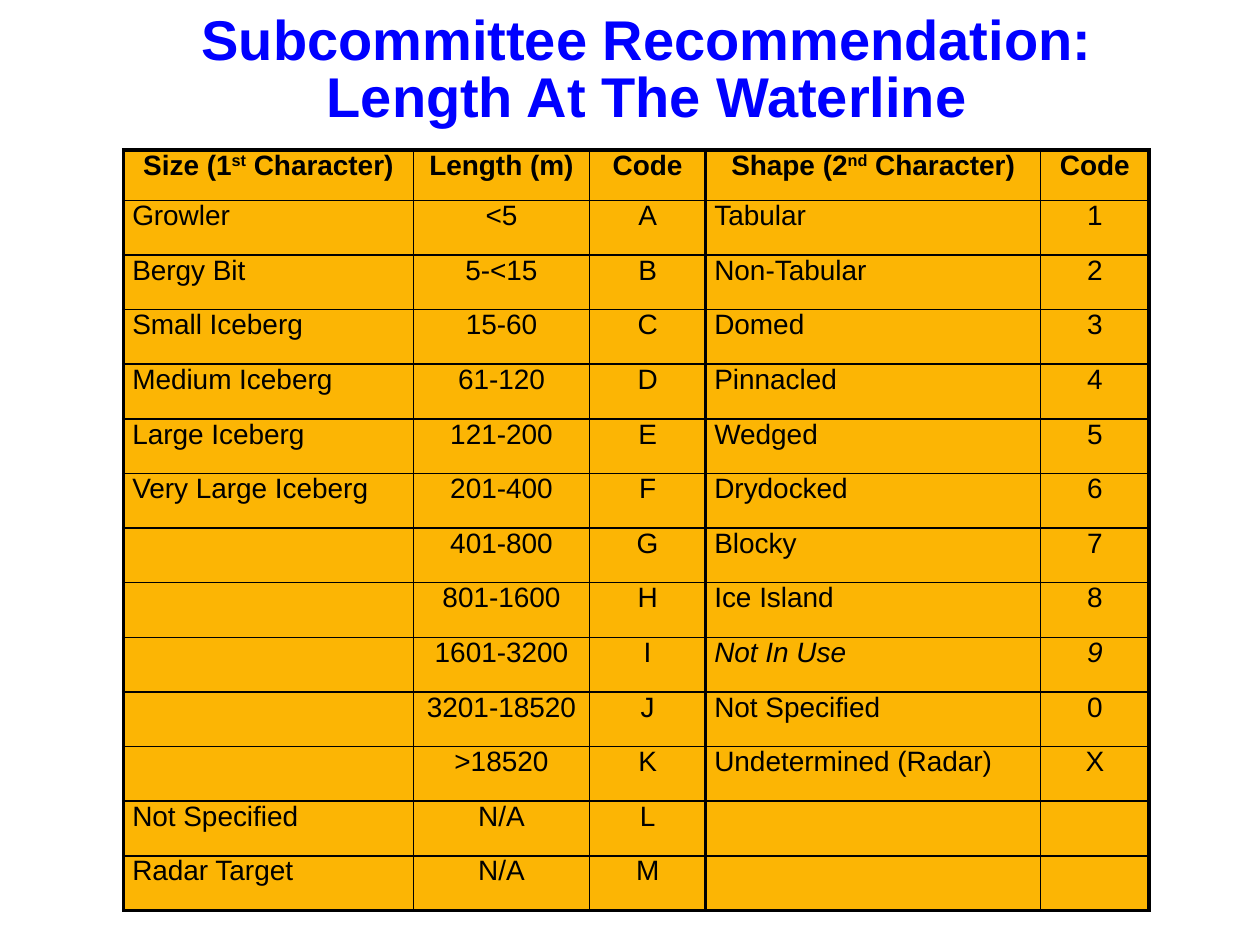
"""Build the iceberg size and shape code table slide."""
from dataclasses import dataclass

from lxml import etree
from pptx import Presentation
from pptx import util as u
from pptx.dml.color import RGBColor
from pptx.enum import text
from pptx.oxml import ns

BLACK, BLUE, AMBER = "000000", "0000FF", "FCB504"
THIN, THICK = 1, 2.25
TABLE_HEIGHT, HEADER_HEIGHT = 6.04, 0.4
COLUMN_WIDTHS = (2.3, 1.4, 0.92, 2.66, 0.86)
LEFT_COLUMNS = (0, 3)
GROUP_EDGES = (0, 3, len(COLUMN_WIDTHS))


@dataclass(frozen=True)
class Style:
    size: float
    color: str = BLACK
    bold: bool = False
    italic: bool = False


@dataclass(frozen=True)
class Part:
    text: str
    superscript: bool = False


TITLE = Style(32, BLUE, bold=True)
HEADING = Style(16, bold=True)
BODY = Style(16)
UNUSED = Style(16, italic=True)

TITLE_LINES = ("Subcommittee Recommendation:", "Length At The Waterline")
HEADINGS = (
    (Part("Size (1"), Part("st", True), Part(" Character)")),
    (Part("Length (m)"),),
    (Part("Code"),),
    (Part("Shape (2"), Part("nd", True), Part(" Character)")),
    (Part("Code"),),
)
ROWS = (
    ("Growler", "<5", "A", "Tabular", "1"),
    ("Bergy Bit", "5-<15", "B", "Non-Tabular", "2"),
    ("Small Iceberg", "15-60", "C", "Domed", "3"),
    ("Medium Iceberg", "61-120", "D", "Pinnacled", "4"),
    ("Large Iceberg", "121-200", "E", "Wedged", "5"),
    ("Very Large Iceberg", "201-400", "F", "Drydocked", "6"),
    ("", "401-800", "G", "Blocky", "7"),
    ("", "801-1600", "H", "Ice Island", "8"),
    ("", "1601-3200", "I", "Not In Use", "9"),
    ("", "3201-18520", "J", "Not Specified", "0"),
    ("", ">18520", "K", "Undetermined (Radar)", "X"),
    ("Not Specified", "N/A", "L", "", ""),
    ("Radar Target", "N/A", "M", "", ""),
)


def rgb(color: str) -> RGBColor:
    return RGBColor.from_string(color)


def add_run(paragraph, part: Part, style: Style) -> None:
    run = paragraph.add_run()
    run.text = part.text
    run.font.name = "Arial"
    run.font.size = u.Pt(style.size)
    run.font.bold = style.bold
    run.font.italic = style.italic
    run.font.color.rgb = rgb(style.color)
    if part.superscript:
        run._r.get_or_add_rPr().set("baseline", "30000")


def add_border(cell, tag: str, width: float) -> None:
    properties = cell._tc.get_or_add_tcPr()
    line = etree.SubElement(properties, ns.qn(f"a:{tag}"), w=str(u.Pt(width)))
    fill = etree.SubElement(line, ns.qn("a:solidFill"))
    etree.SubElement(fill, ns.qn("a:srgbClr"), val=BLACK)


def format_cell(cell, row: int, column: int) -> None:
    edges = {
        "lnL": column in GROUP_EDGES,
        "lnR": column + 1 in GROUP_EDGES,
        "lnT": row == 0,
        "lnB": row == len(ROWS),
    }
    for tag, heavy in edges.items():
        add_border(cell, tag, THICK if heavy else THIN)
    cell.fill.solid()
    cell.fill.fore_color.rgb = rgb(AMBER)
    cell.margin_left = cell.margin_right = u.Inches(0.07)
    cell.margin_top = cell.margin_bottom = u.Inches(0)


def write_cell(cell, parts: tuple[Part, ...], style: Style, centered: bool) -> None:
    paragraph = cell.text_frame.paragraphs[0]
    paragraph.alignment = text.PP_ALIGN.CENTER if centered else text.PP_ALIGN.LEFT
    for part in parts:
        add_run(paragraph, part, style)


def add_title(slide) -> None:
    shape = slide.shapes.add_textbox(
        u.Inches(1.14), u.Inches(0.07), u.Inches(7.99), u.Inches(1.02))
    frame = shape.text_frame
    frame.word_wrap = True
    for index, line in enumerate(TITLE_LINES):
        paragraph = frame.add_paragraph() if index else frame.paragraphs[0]
        paragraph.alignment = text.PP_ALIGN.CENTER
        paragraph.line_spacing = 0.85
        add_run(paragraph, Part(line), TITLE)


def add_code_table(slide) -> None:
    table = slide.shapes.add_table(
        len(ROWS) + 1, len(COLUMN_WIDTHS), u.Inches(0.98), u.Inches(1.19),
        u.Inches(sum(COLUMN_WIDTHS)), u.Inches(TABLE_HEIGHT)).table
    table.first_row = table.horz_banding = False
    for column, width in zip(table.columns, COLUMN_WIDTHS):
        column.width = u.Inches(width)
    body_height = (TABLE_HEIGHT - HEADER_HEIGHT) / len(ROWS)
    for index, row in enumerate(table.rows):
        row.height = u.Inches(body_height if index else HEADER_HEIGHT)
        for column, cell in enumerate(row.cells):
            format_cell(cell, index, column)
    for column, parts in enumerate(HEADINGS):
        write_cell(table.cell(0, column), parts, HEADING, True)
    for index, values in enumerate(ROWS, start=1):
        for column, value in enumerate(values):
            unused = values[3] == "Not In Use" and column >= 3
            if value:
                write_cell(table.cell(index, column), (Part(value),),
                           UNUSED if unused else BODY, column not in LEFT_COLUMNS)


def main() -> None:
    presentation = Presentation()
    presentation.slide_width = u.Inches(10)
    presentation.slide_height = u.Inches(7.5)
    slide = presentation.slides.add_slide(presentation.slide_layouts[6])
    add_title(slide)
    add_code_table(slide)
    presentation.save("out.pptx")


if __name__ == "__main__":
    main()
